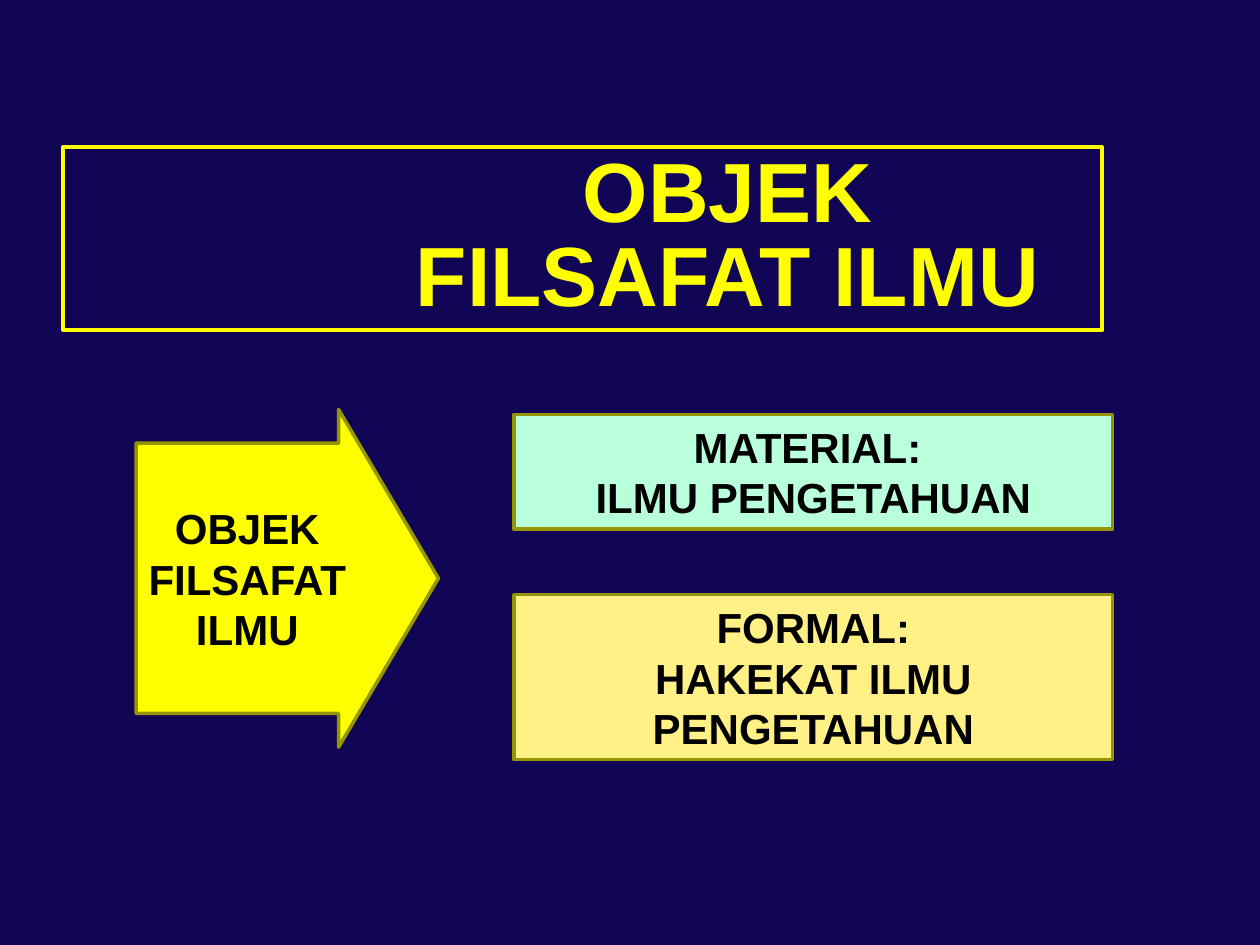
from pptx import Presentation
from pptx.dml.color import RGBColor
from pptx.enum.shapes import MSO_SHAPE
from pptx.enum.text import MSO_ANCHOR, MSO_AUTO_SIZE, PP_ALIGN
from pptx.util import Inches, Pt

RECT = MSO_SHAPE.RECTANGLE
ARROW = MSO_SHAPE.RIGHT_ARROW
MIDDLE = MSO_ANCHOR.MIDDLE
BOTTOM = MSO_ANCHOR.BOTTOM
CENTER = PP_ALIGN.CENTER
FIXED = MSO_AUTO_SIZE.NONE

NAVY, YELLOW, OLIVE = "110656", "FFFF00", "959500"
MINT, CREAM, BLACK = "B9FFDC", "FFF185", "000000"


def paint(target, color):
    """Give a fill a solid colour."""
    target.solid()
    target.fore_color.rgb = RGBColor.from_string(color)


def outline(shape, color, width):
    """Set the colour and width of a shape's line."""
    paint(shape.line.fill, color)
    shape.line.width = Pt(width)


def write(shape, text, size=24, color=BLACK, anchor=MIDDLE, pitch=None):
    """Write bold centred text, one paragraph per line."""
    frame = shape.text_frame
    frame.text = text
    frame.word_wrap = True
    frame.auto_size = FIXED
    frame.vertical_anchor = anchor
    for para in frame.paragraphs:
        para.alignment = CENTER
        if pitch:
            para.line_spacing = Pt(pitch)
        for run in para.runs:
            font = run.font
            font.name, font.size, font.bold = "Arial", Pt(size), True
            paint(font.fill, color)


def head(slide, box):
    """Place the framed title, with its first line shifted right."""
    title = slide.shapes.title
    title.left, title.top, title.width, title.height = map(Inches, box)
    outline(title, YELLOW, 2.25)
    write(title, "OBJEK\nFILSAFAT ILMU", size=48, color=YELLOW,
          anchor=BOTTOM, pitch=48)
    first = title.text_frame.paragraphs[0]
    first.runs[0].font._element.getparent().getparent().get_or_add_pPr().set(
        "marL", str(Inches(2.3)))


def block(slide, box, text, fill, kind=RECT):
    """Add a filled shape with an olive line and text."""
    shape = slide.shapes.add_shape(kind, *map(Inches, box))
    shape.shadow.inherit = False
    paint(shape.fill, fill)
    outline(shape, OLIVE, 2)
    write(shape, text)
    return shape


def source(slide, box):
    """Add the arrow that leads to the two kinds of object."""
    arrow = block(slide, box, "OBJEK FILSAFAT ILMU", YELLOW, ARROW)
    arrow.adjustments[0] = 0.8
    arrow.adjustments[1] = 0.33


def kinds(slide, box):
    """Stack the material and formal objects in the box."""
    left, top, width, height = box
    low = 1.31
    block(slide, (left, top, width, 0.91),
          "MATERIAL: \nILMU PENGETAHUAN", MINT)
    block(slide, (left, top + height - low, width, low),
          "FORMAL:\nHAKEKAT ILMU PENGETAHUAN", CREAM)


def main():
    """Build the slide and save it."""
    deck = Presentation()
    deck.slide_width, deck.slide_height = Inches(10), Inches(7.5)
    slide = deck.slides.add_slide(deck.slide_layouts[5])
    paint(slide.background.fill, NAVY)
    head(slide, (0.5, 1.17, 8.25, 1.45))
    source(slide, (1.08, 3.25, 2.4, 2.68))
    kinds(slide, (4.08, 3.29, 4.75, 2.74))
    deck.save("out.pptx")


if __name__ == "__main__":
    main()
